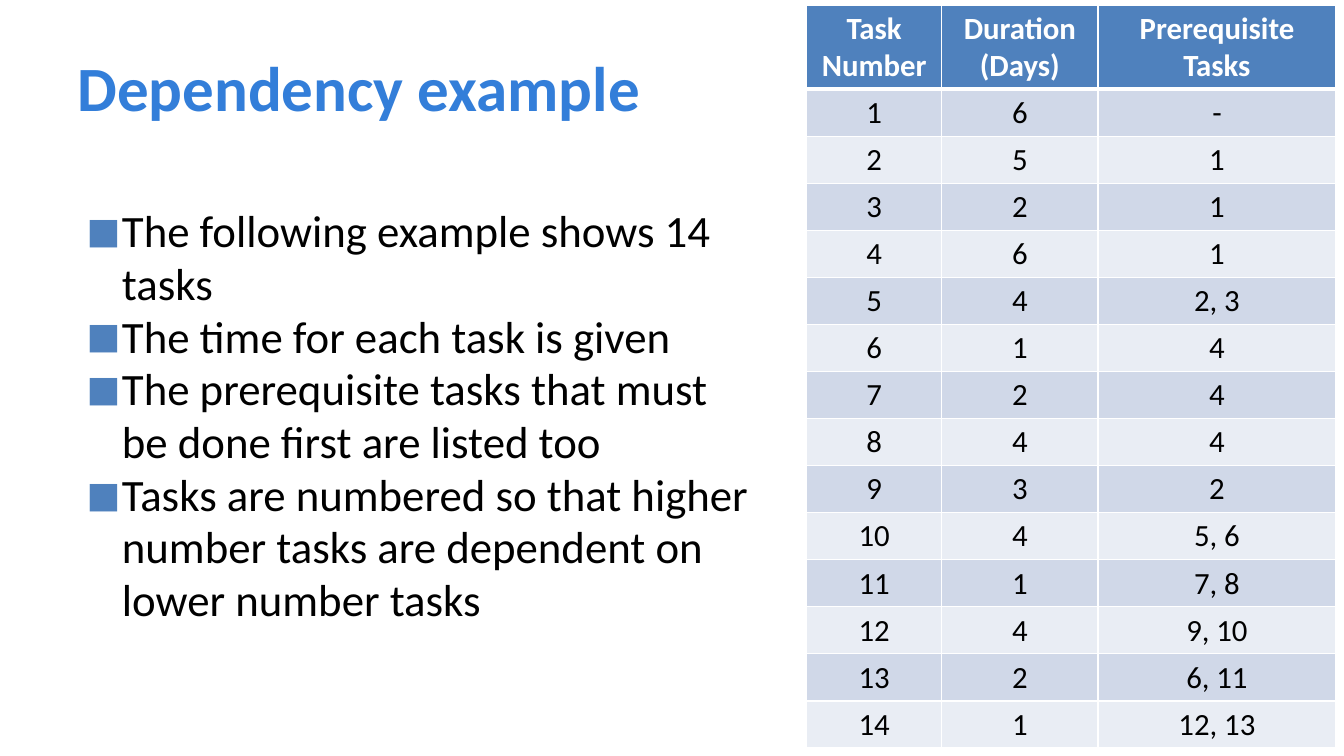
from lxml import etree
from pptx import Presentation
from pptx import util as u
from pptx.dml.color import RGBColor
from pptx.enum import text
from pptx.oxml import ns

PX = 9144
COLORS = {
    "title": "337ED9",
    "ink": "000000",
    "white": "FFFFFF",
    "accent": "4F81BD",
    "odd": "D0D8E8",
    "even": "E9EDF4",
}
POINTS = [
    "The following example shows 14 tasks",
    "The time for each task is given",
    "The prerequisite tasks that must be done first are listed too",
    "Tasks are numbered so that higher number tasks are dependent on lower number tasks",
]
HEADINGS = ["Task Number", "Duration (Days)", "Prerequisite Tasks"]
DURATIONS = [6, 5, 2, 6, 4, 1, 2, 4, 3, 4, 1, 4, 2, 1]
PREREQUISITES = ["-", "1", "1", "1", "2, 3", "4", "4", "4", "2",
                 "5, 6", "7, 8", "9, 10", "6, 11", "12, 13"]
COLUMN_WIDTHS = [134, 155, 236]
HEADING_HEIGHT, TASK_HEIGHT = 65, 36


def px(length):
    return u.Emu(length * PX)


def rgb(name):
    return RGBColor.from_string(COLORS[name])


def add_xml(parent, tag, **attributes):
    return etree.SubElement(parent, ns.qn(tag), attributes)


def write(paragraph, words, size, color="ink", bold=False, align=text.PP_ALIGN.LEFT):
    paragraph.alignment = align
    run = paragraph.add_run()
    run.text = words
    run.font.name = "Calibri"
    run.font.size = u.Pt(size)
    run.font.bold = bold
    run.font.color.rgb = rgb(color)


def add_frame(slide, left, top, width, height, insets, anchor):
    frame = slide.shapes.add_textbox(px(left), px(top), px(width), px(height)).text_frame
    frame.word_wrap = True
    frame.vertical_anchor = anchor
    frame.margin_left, frame.margin_top, frame.margin_right, frame.margin_bottom = map(px, insets)
    return frame


def add_bullet(paragraph):
    properties = paragraph._p.get_or_add_pPr()
    properties.set("marL", str(px(48)))
    properties.set("indent", str(px(-35)))
    add_xml(add_xml(properties, "a:buClr"), "a:srgbClr", val=COLORS["accent"])
    add_xml(properties, "a:buSzPct", val="80000")
    add_xml(properties, "a:buFont", typeface="Calibri")
    add_xml(properties, "a:buChar", char="■")


def add_borders(cell, top, bottom):
    properties = cell._tc.get_or_add_tcPr()
    for side, points in (("L", 1), ("R", 1), ("T", top), ("B", bottom)):
        line = add_xml(properties, f"a:ln{side}", w=str(u.Pt(points)))
        add_xml(add_xml(line, "a:solidFill"), "a:srgbClr", val=COLORS["white"])


def add_points(slide):
    body = add_frame(slide, 67, 194, 700, 506, (6, 10, 10, 5), text.MSO_ANCHOR.TOP)
    for index, point in enumerate(POINTS):
        paragraph = body.add_paragraph() if index else body.paragraphs[0]
        write(paragraph, point, 32)
        paragraph.line_spacing = 0.98
        add_bullet(paragraph)


def add_tasks(slide):
    tasks = zip(range(1, len(DURATIONS) + 1), DURATIONS, PREREQUISITES)
    rows = [HEADINGS, *tasks]
    height = HEADING_HEIGHT + TASK_HEIGHT * len(DURATIONS)
    table = slide.shapes.add_table(len(rows), len(HEADINGS), px(800), px(5),
                                   px(sum(COLUMN_WIDTHS)), px(height)).table
    for column, width in zip(table.columns, COLUMN_WIDTHS):
        column.width = px(width)
    for number, values in enumerate(rows):
        heading = number == 0
        table.rows[number].height = px(HEADING_HEIGHT if heading else TASK_HEIGHT)
        fill = "accent" if heading else ("even", "odd")[number % 2]
        for position, value in enumerate(values):
            cell = table.cell(number, position)
            add_borders(cell, top=3 if number == 1 else 1, bottom=3 if heading else 1)
            cell.fill.solid()
            cell.fill.fore_color.rgb = rgb(fill)
            write(cell.text_frame.paragraphs[0], str(value), 22, bold=heading,
                  color="white" if heading else "ink", align=text.PP_ALIGN.CENTER)


def main():
    deck = Presentation()
    deck.slide_width, deck.slide_height = px(1333), px(750)
    slide = deck.slides.add_slide(deck.slide_layouts[6])
    title = add_frame(slide, 67, 17, 1200, 137, (10, 5, 5, 5), text.MSO_ANCHOR.MIDDLE)
    write(title.paragraphs[0], "Dependency example", 45, color="title", bold=True)
    add_points(slide)
    add_tasks(slide)
    deck.save("out.pptx")


if __name__ == "__main__":
    main()
